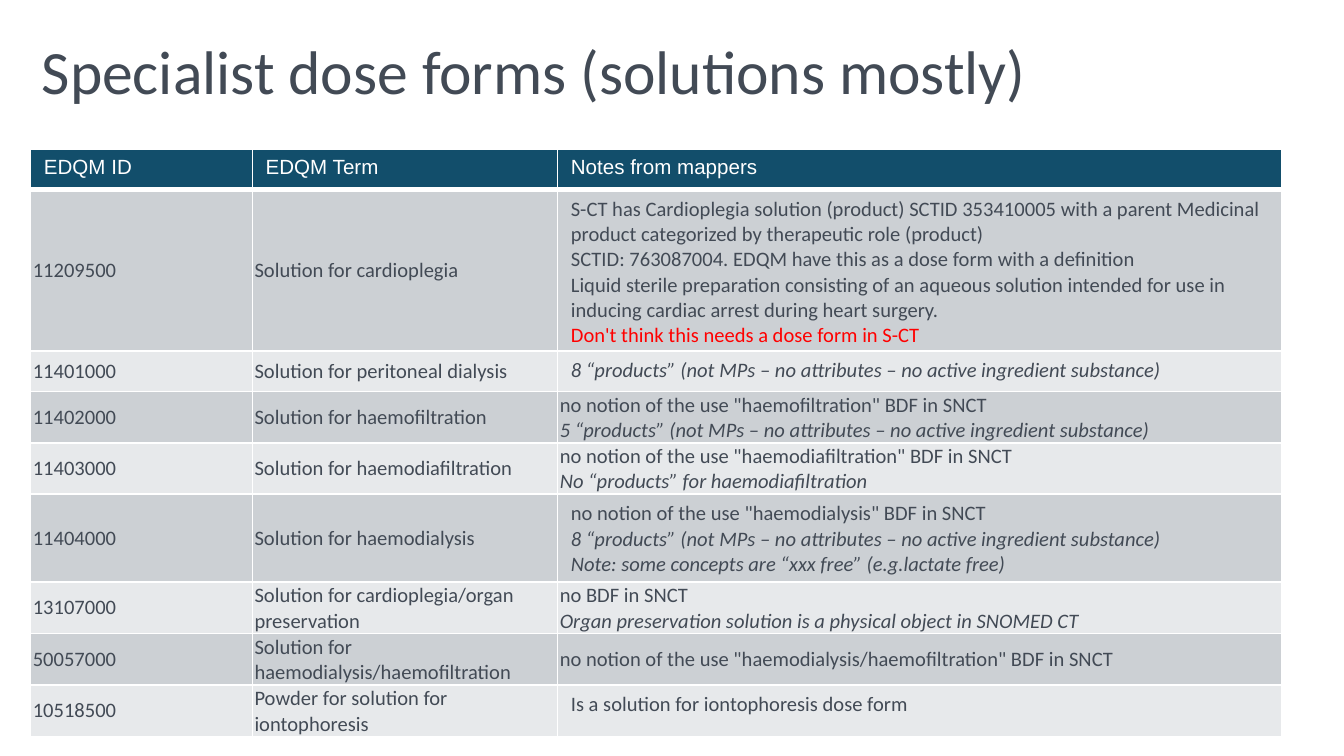
"""Build a slide with a table of specialist dose forms and mapping notes."""
import copy

import pptx
import pptx.dml.color
import pptx.enum.text
import pptx.oxml
import pptx.oxml.ns
import pptx.util

Cm = pptx.util.Cm
Pt = pptx.util.Pt
MID = pptx.enum.text.MSO_ANCHOR.MIDDLE
TOP = pptx.enum.text.MSO_ANCHOR.TOP
INK, RED, WHITE = "424A55", "FF0000", "FFFFFF"


def paint(color, tone):
    color.rgb = pptx.dml.color.RGBColor.from_string(tone)


def write(para, text, size=11, font="Calibri", tone=INK, slant=None):
    for piece in text.splitlines(keepends=True):
        run = para.add_run()
        run.text = piece.rstrip("\n")
        run.font.size = Pt(size)
        run.font.name = font
        run.font.italic = slant
        run.font.fill.solid()
        paint(run.font.fill.fore_color, tone)
        if piece.endswith("\n"):
            para.add_line_break()
            para._p[-1].append(copy.deepcopy(run._r.rPr))


heads = ["EDQM ID", "EDQM Term", "Notes from mappers"]
active = "“products” (not MPs – no attributes – no active ingredient substance)"
cardio = (
    "S-CT has Cardioplegia solution (product) SCTID 353410005 with a parent "
    "Medicinal product categorized by therapeutic role (product)\n"
    "SCTID: 763087004. EDQM have this as a dose form with a definition \n"
    "Liquid sterile preparation consisting of an aqueous solution intended "
    "for use in inducing cardiac arrest during heart surgery. \n"
)
alert = "Don't think this needs a dose form in S-CT"

# code, term, plain note, italic notes, padded note cell, row height
forms = [
    ("11209500", "Solution for cardioplegia", cardio, [], True, 2.97),
    ("11401000", "Solution for peritoneal dialysis", "",
     [f"8 {active}"], True, 0.76),
    ("11402000", "Solution for haemofiltration",
     'no notion of the use "haemofiltration" BDF in SNCT',
     [f"5 {active}"], False, 0.97),
    ("11403000", "Solution for haemodiafiltration",
     'no notion of the use "haemodiafiltration" BDF in SNCT',
     ["No “products” for haemodiafiltration"], False, 0.97),
    ("11404000", "Solution for haemodialysis",
     'no notion of the use "haemodialysis" BDF in SNCT',
     [f"8 {active}", "Note: some concepts are “xxx free” (e.g.lactate free)"],
     True, 1.6),
    ("13107000", "Solution for cardioplegia/organ preservation",
     "no BDF in SNCT",
     ["Organ preservation solution is a physical object in SNOMED CT"],
     False, 0.97),
    ("50057000", "Solution for haemodialysis/haemofiltration",
     'no notion of the use "haemodialysis/haemofiltration" BDF in SNCT',
     [], False, 0.97),
    ("10518500", "Powder for solution for iontophoresis",
     "Is a solution for iontophoresis dose form", [], True, 0.97),
]

deck = pptx.Presentation()
deck.slide_width, deck.slide_height = Cm(25.4), Cm(14.29)
slide = deck.slides.add_slide(deck.slide_layouts[6])

title = slide.shapes.add_textbox(Cm(0.6), Cm(0.33), Cm(21.9), Cm(2.16))
frame = title.text_frame
frame.word_wrap = True
frame.vertical_anchor = MID
frame.margin_left = frame.margin_right = Cm(0.19)
frame.margin_top = frame.margin_bottom = Cm(0.1)
frame.paragraphs[0].line_spacing = 0.9
write(frame.paragraphs[0], "Specialist dose forms (solutions mostly)", size=33)

widths = [4.19, 5.77, 13.69]
highs = [0.76] + [form[-1] for form in forms]
table = slide.shapes.add_table(
    len(highs), len(widths), Cm(0.58), Cm(2.82), Cm(sum(widths)), Cm(sum(highs))
).table
for col, width in zip(table.columns, widths):
    col.width = Cm(width)
for row, high in zip(table.rows, highs):
    row.height = Cm(high)

for r, row in enumerate(table.rows):
    for c, cell in enumerate(row.cells):
        roomy = r == 0 or (c == 2 and forms[r - 1][4])
        cell.vertical_anchor = TOP if roomy else MID
        cell.margin_left = cell.margin_right = Cm(0.25 if roomy else 0.04)
        cell.margin_top = cell.margin_bottom = Cm(0.13 if roomy else 0.02)
        for side in "LRTB":
            thick = Pt(3 if r == 0 and side == "B" else 1)
            cell._tc.get_or_add_tcPr().append(pptx.oxml.parse_xml(
                f'<a:ln{side} {pptx.oxml.ns.nsdecls("a")} w="{thick}"><a:solidFill>'
                f'<a:srgbClr val="{WHITE}"/></a:solidFill></a:ln{side}>'
            ))
        cell.fill.solid()
        band = "CCD0D4" if r % 2 else "E7E9EB"
        paint(cell.fill.fore_color, band if r else "124E6B")
        para = cell.text_frame.paragraphs[0]
        if r == 0:
            write(para, heads[c], font="Arial", tone=WHITE)
        elif c < 2:
            write(para, forms[r - 1][c])
        else:
            plain, notes = forms[r - 1][2:4]
            write(para, plain)
            if plain == cardio:
                write(para, alert, tone=RED)
            for n, note in enumerate(notes):
                if plain or n:
                    para = cell.text_frame.add_paragraph()
                write(para, note, slant=True)

deck.save("out.pptx")
